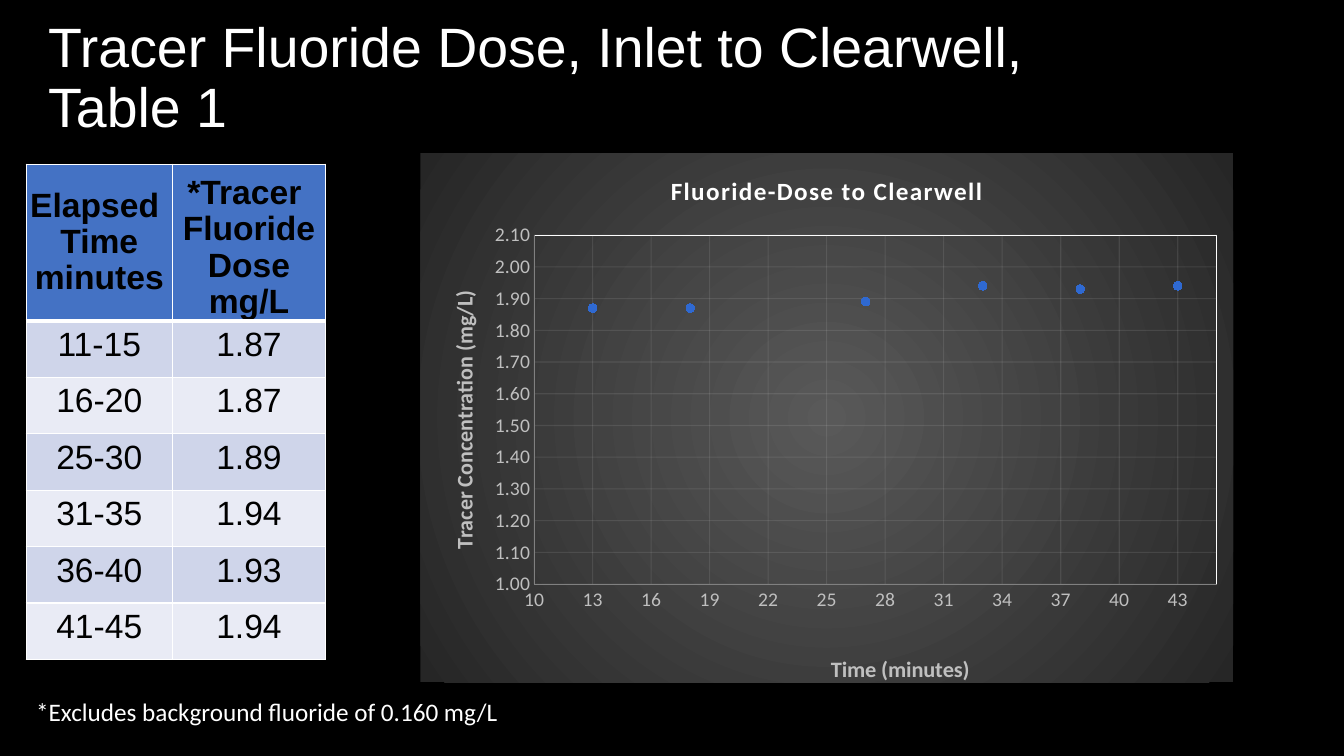
import pptx
import pptx.chart.data
import pptx.dml.color
import pptx.enum.chart
import pptx.enum.text
import pptx.oxml
import pptx.oxml.ns
import pptx.util
from pptx.util import Inches, Pt

COLORS = {
    "background": "000000", "text": "FFFFFF", "header": "4472C4",
    "odd_row": "CFD5EA", "even_row": "E9EBF5", "table_text": "000000",
    "border": "FFFFFF", "axis_text": "BFBFBF", "axis_line": "808080",
    "grid": "F2F2F2", "marker": "2F69D1", "glow": "595959", "edge": "262626",
}
TITLE = "Tracer Fluoride Dose, Inlet to Clearwell, \vTable 1"
FOOTNOTE = "*Excludes background fluoride of 0.160 mg/L"
HEADERS = ["Elapsed \vTime\nminutes", "*Tracer \nFluoride Dose\vmg/L"]
# elapsed time, midpoint in minutes, dose in mg/L
DOSES = [
    ("11-15", 13, 1.87), ("16-20", 18, 1.87), ("25-30", 27, 1.89),
    ("31-35", 33, 1.94), ("36-40", 38, 1.93), ("41-45", 43, 1.94),
]
COLUMN_WIDTHS = [1.45, 1.52]
HEADER_HEIGHT, ROW_HEIGHT = 1.35, 0.56
CHART_TITLE = "Fluoride-Dose to Clearwell"
# title, minimum, maximum, step, number format, title position in the chart
TIME_AXIS = ("Time (minutes)", 10, 45, 3, "#,##0", (0.5, 0.94))
DOSE_AXIS = ("Tracer Concentration (mg/L)", 1, 2.1, 0.1, "0.00", (0.03, 0.26))
PLOT_AREA = (0.14, 0.155, 0.84, 0.66)
MIDDLE = pptx.enum.text.MSO_ANCHOR.MIDDLE
BOTTOM = pptx.enum.text.MSO_ANCHOR.BOTTOM


def rgb(name):
    return pptx.dml.color.RGBColor.from_string(COLORS[name])


def xml(text):
    return pptx.oxml.parse_xml(text.replace(
        ">", " " + pptx.oxml.ns.nsdecls("a", "c") + ">", 1))


def set_font(font, size, color, name, bold=False):
    font.size, font.name, font.bold = Pt(size), name, bold
    font.color.rgb = rgb(color)


def add_text(slide, text, place, size, font_name, wrap):
    box = slide.shapes.add_textbox(*map(Inches, place))
    frame = box.text_frame
    frame.word_wrap = wrap
    frame.text = text
    set_font(frame.paragraphs[0].font, size, "text", font_name)
    return frame


def set_borders(cell, bottom_width):
    properties = cell._tc.get_or_add_tcPr()
    widths = {"lnL": 1, "lnR": 1, "lnT": 1, "lnB": bottom_width}
    for position, (side, width) in enumerate(widths.items()):
        properties.insert(position, xml(
            f'<a:{side} w="{Pt(width)}"><a:solidFill><a:srgbClr '
            f'val="{COLORS["border"]}"/></a:solidFill></a:{side}>'))


def fill_cell(cell, text, fill, header=False):
    cell.text = text
    cell.fill.solid()
    cell.fill.fore_color.rgb = rgb(fill)
    for para in cell.text_frame.paragraphs:
        para.alignment = pptx.enum.text.PP_ALIGN.CENTER
        set_font(para.font, 24, "table_text", "Arial", header)
        if header:
            para.line_spacing = 0.97
    if header:
        cell.margin_left = cell.margin_right = 0
        cell.margin_top = cell.margin_bottom = 0
    set_borders(cell, 3 if header else 1)


def add_dose_table(slide):
    height = HEADER_HEIGHT + ROW_HEIGHT * len(DOSES)
    table = slide.shapes.add_table(
        len(DOSES) + 1, 2, Inches(0.26), Inches(1.63),
        Inches(sum(COLUMN_WIDTHS)), Inches(height)).table
    for column, width in zip(table.columns, COLUMN_WIDTHS):
        column.width = Inches(width)
    for index, row in enumerate(table.rows):
        row.height = Inches(ROW_HEIGHT if index else HEADER_HEIGHT)
    for column, (text, anchor) in enumerate(zip(HEADERS, (MIDDLE, BOTTOM))):
        fill_cell(table.cell(0, column), text, "header", header=True)
        table.cell(0, column).vertical_anchor = anchor
    for row, (elapsed, _, dose) in enumerate(DOSES, 1):
        fill = "odd_row" if row % 2 else "even_row"
        for column, text in enumerate((elapsed, f"{dose:.2f}")):
            fill_cell(table.cell(row, column), text, fill)


def manual_layout(x, y, width=None, height=None):
    """Layout element in fractions of the chart; a size makes it the inner plot."""
    size = target = ""
    if width:
        target = '<c:layoutTarget val="inner"/>'
        size = f'<c:w val="{width}"/><c:h val="{height}"/>'
    return xml(
        f'<c:layout><c:manualLayout>{target}<c:xMode val="edge"/>'
        f'<c:yMode val="edge"/><c:x val="{x}"/><c:y val="{y}"/>{size}'
        '</c:manualLayout></c:layout>')


def replace_layout(parent, layout, position):
    for old in parent.findall(pptx.oxml.ns.qn("c:layout")):
        parent.remove(old)
    parent.insert(position, layout)


def style_axis(axis, settings):
    title, low, high, step, number_format, title_place = settings
    axis.minimum_scale, axis.maximum_scale, axis.major_unit = low, high, step
    axis.major_tick_mark = axis.minor_tick_mark = pptx.enum.chart.XL_TICK_MARK.NONE
    axis.tick_labels.number_format = number_format
    axis.tick_labels.number_format_is_linked = False
    set_font(axis.tick_labels.font, 14, "axis_text", "Calibri")
    axis.format.line.color.rgb = rgb("axis_line")
    axis.format.line.width = Pt(0.75)
    axis.has_major_gridlines = True
    grid = axis.major_gridlines.format.line
    grid.color.rgb = rgb("grid")
    grid.width = Pt(0.75)
    for color in axis.major_gridlines._xAx.iterfind(
            "c:majorGridlines//a:srgbClr", pptx.oxml.ns._nsmap):
        color.append(xml('<a:alpha val="10000"></a:alpha>'))
    axis.axis_title.text_frame.text = title
    set_font(axis.axis_title.text_frame.paragraphs[0].font, 16, "axis_text",
             "Calibri", True)
    replace_layout(axis.axis_title._element, manual_layout(*title_place), 1)


def add_dose_chart(slide):
    data = pptx.chart.data.XyChartData()
    points = data.add_series("Series 1")
    for _, minute, dose in DOSES:
        points.add_data_point(minute, dose)
    chart = slide.shapes.add_chart(
        pptx.enum.chart.XL_CHART_TYPE.XY_SCATTER, Inches(4.17), Inches(1.52),
        Inches(8.06), Inches(5.33), data).chart
    set_font(chart.font, 10, "text", "Calibri")
    chart.has_legend = False
    chart.has_title = True
    chart.chart_title.text_frame.text = CHART_TITLE
    heading = chart.chart_title.text_frame.paragraphs[0]
    set_font(heading.font, 18, "text", "Calibri", True)
    heading.font._element.set("spc", "100")
    style_axis(chart.category_axis, TIME_AXIS)
    style_axis(chart.value_axis, DOSE_AXIS)

    plot = chart.plots[0]
    plot.vary_by_categories = False
    series = plot.series[0]
    series.format.line.fill.background()
    series.marker.style = pptx.enum.chart.XL_MARKER_STYLE.CIRCLE
    series.marker.size = 6
    series.marker.format.fill.solid()
    series.marker.format.fill.fore_color.rgb = rgb("marker")
    series.marker.format.line.fill.background()

    plot_area = chart._chartSpace.chart.plotArea
    replace_layout(plot_area, manual_layout(*PLOT_AREA), 0)
    plot_area.append(xml(
        '<c:spPr><a:noFill/><a:ln w="9525"><a:solidFill><a:srgbClr '
        f'val="{COLORS["border"]}"/></a:solidFill></a:ln></c:spPr>'))
    chart._chartSpace.chart.addnext(xml(
        '<c:spPr><a:gradFill><a:gsLst>'
        f'<a:gs pos="0"><a:srgbClr val="{COLORS["glow"]}"/></a:gs>'
        f'<a:gs pos="100000"><a:srgbClr val="{COLORS["edge"]}"/></a:gs>'
        '</a:gsLst><a:path path="circle"><a:fillToRect l="50000" t="50000" '
        'r="50000" b="50000"/></a:path></a:gradFill>'
        '<a:ln><a:noFill/></a:ln></c:spPr>'))


def main():
    deck = pptx.Presentation()
    deck.slide_width, deck.slide_height = Inches(13.33), Inches(7.5)
    slide = deck.slides.add_slide(deck.slide_layouts[6])
    slide.background.fill.solid()
    slide.background.fill.fore_color.rgb = rgb("background")
    title = add_text(slide, TITLE, (0.38, 0.24, 12.04, 1.09), 39.6, "Arial", True)
    title.vertical_anchor = MIDDLE
    title.paragraphs[0].line_spacing = 0.9
    add_dose_table(slide)
    add_dose_chart(slide)
    add_text(slide, FOOTNOTE, (0.26, 6.86, 4.84, 0.4), 18, "Calibri", False)
    deck.save("out.pptx")


if __name__ == "__main__":
    main()
